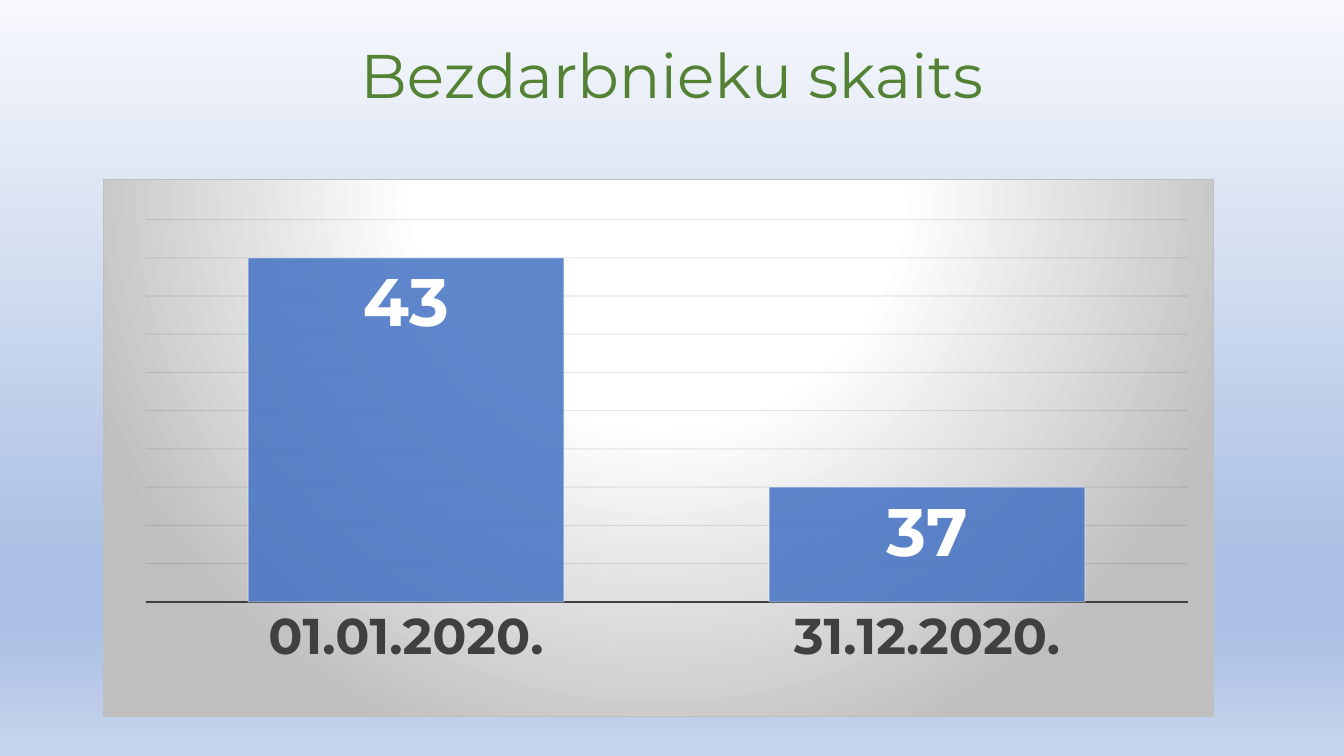
"""Build a slide with a column chart of the number of unemployed people."""
from dataclasses import dataclass

import lxml.etree
import pptx
import pptx.chart.data
import pptx.dml.color
import pptx.enum.chart
import pptx.enum.text
import pptx.oxml
import pptx.oxml.ns
import pptx.util

Pt = pptx.util.Pt
qn = pptx.oxml.ns.qn


@dataclass(frozen=True)
class Theme:
    font: str = "Montserrat"
    base_font: str = "Calibri"
    title: str = "548235"
    bar: str = "4472C4"
    white: str = "FFFFFF"
    black: str = "000000"
    axis: str = "404040"
    grid: str = "0D0D0D"
    border: str = "BFBFBF"
    page_stops: tuple = ((0, "F6F8FC"), (74, "ABC0E4"), (83, "ABC0E4"), (100, "C7D5ED"))
    panel_stops: tuple = ((0, "FFFFFF"), (39, "FFFFFF"), (100, "BFBFBF"))
    title_size: int = 44
    label_size: int = 48
    category_size: int = 36
    base_size: int = 10
    hairline: float = 0.75
    axis_line: float = 1.5


THEME = Theme()
LINEAR = '<a:lin ang="5400000" scaled="0"/>'
RADIAL = ('<a:path path="circle"><a:fillToRect l="50000" t="-80000" '
          'r="50000" b="180000"/></a:path>')


def rgb(color):
    return pptx.dml.color.RGBColor.from_string(color)


def style_font(font, size, color, name=THEME.font, bold=False):
    font.name, font.size, font.bold = name, Pt(size), bold
    font.color.rgb = rgb(color)


def style_line(line, color, width):
    line.color.rgb = rgb(color)
    line.width = Pt(width)


def set_alpha(parent, *percents):
    for clr, percent in zip(parent.iter(qn("a:srgbClr")), percents):
        lxml.etree.SubElement(clr, qn("a:alpha")).set("val", str(percent * 1000))


def gradient_xml(stops, direction):
    gs = "".join(f'<a:gs pos="{pos * 1000}"><a:srgbClr val="{color}"/></a:gs>'
                 for pos, color in stops)
    return f'<a:gradFill rotWithShape="1"><a:gsLst>{gs}</a:gsLst>{direction}</a:gradFill>'


def set_background(s):
    s.background.fill.gradient()
    old = next(s._element.iter(qn("a:gradFill")))
    xml = gradient_xml(THEME.page_stops, LINEAR).replace(
        "<a:gradFill", f'<a:gradFill {pptx.oxml.ns.nsdecls("a")}', 1)
    old.getparent().replace(old, pptx.oxml.parse_xml(xml))


def write_text(tf, text, align=pptx.enum.text.PP_ALIGN.CENTER, spacing=0.9, **font):
    p = tf.paragraphs[0]
    p.alignment, p.line_spacing = align, spacing
    r = p.add_run()
    r.text = text
    style_font(r.font, **font)


def add_title(s, text):
    sp = s.shapes.title
    sp.left, sp.top, sp.width, sp.height = Pt(66), Pt(28.8), Pt(828), Pt(104.4)
    tf = sp.text_frame
    tf.word_wrap = True
    tf.auto_size = pptx.enum.text.MSO_AUTO_SIZE.NONE
    tf.vertical_anchor = pptx.enum.text.MSO_ANCHOR.TOP
    write_text(tf, text, size=THEME.title_size, color=THEME.title)


def style_panel(chart):
    xml = (f'<c:spPr {pptx.oxml.ns.nsdecls("c", "a")}>'
           f'{gradient_xml(THEME.panel_stops, RADIAL)}'
           f'<a:ln w="{Pt(THEME.hairline)}"><a:solidFill>'
           f'<a:srgbClr val="{THEME.border}"/></a:solidFill></a:ln></c:spPr>')
    chart._chartSpace.find(qn("c:chart")).addnext(pptx.oxml.parse_xml(xml))


def place_plot(chart, x, y, w, h):
    area = chart._chartSpace.find(qn("c:chart")).find(qn("c:plotArea"))
    for old in area.findall(qn("c:layout")):
        area.remove(old)
    xml = (f'<c:layout {pptx.oxml.ns.nsdecls("c")}><c:manualLayout>'
           '<c:layoutTarget val="inner"/><c:xMode val="edge"/><c:yMode val="edge"/>'
           f'<c:x val="{x}"/><c:y val="{y}"/><c:w val="{w}"/><c:h val="{h}"/>'
           '</c:manualLayout></c:layout>')
    area.insert(0, pptx.oxml.parse_xml(xml))


def style_axes(chart, low, high):
    cat, val = chart.category_axis, chart.value_axis
    cat.major_tick_mark = pptx.enum.chart.XL_TICK_MARK.NONE
    style_font(cat.tick_labels.font, THEME.category_size, THEME.axis, bold=True)
    style_line(cat.format.line, THEME.axis, THEME.axis_line)
    val.visible = False
    val.minimum_scale, val.maximum_scale, val.major_unit = low, high, 1
    val.has_major_gridlines = True
    style_line(val.major_gridlines.format.line, THEME.grid, THEME.hairline)
    set_alpha(val._element.find(qn("c:majorGridlines")), 10)


def style_columns(plot):
    plot.gap_width, plot.vary_by_categories = 65, False
    ser = plot.series[0]
    ser.format.fill.solid()
    ser.format.fill.fore_color.rgb = rgb(THEME.bar)
    style_line(ser.format.line, THEME.white, THEME.hairline)
    set_alpha(ser._element.find(qn("c:spPr")), 85, 50)
    labels = ser.data_labels
    labels.show_value = True
    labels.position = pptx.enum.chart.XL_LABEL_POSITION.INSIDE_END
    style_font(labels.font, THEME.label_size, THEME.white, bold=True)


def add_column_chart(s, categories, values, low, high):
    data = pptx.chart.data.CategoryChartData()
    data.categories = categories
    data.add_series("Series 1", values)
    chart = s.shapes.add_chart(pptx.enum.chart.XL_CHART_TYPE.COLUMN_CLUSTERED,
                               Pt(73.44), Pt(128.16), Pt(793.44), Pt(383.76), data).chart
    chart.has_legend = chart.has_title = False
    style_font(chart.font, THEME.base_size, THEME.black, name=THEME.base_font)
    style_panel(chart)
    place_plot(chart, 0.038, 0.074, 0.939, 0.713)
    style_axes(chart, low, high)
    style_columns(chart.plots[0])


def main():
    prs = pptx.Presentation()
    prs.slide_width, prs.slide_height = Pt(960), Pt(540)
    s = prs.slides.add_slide(prs.slide_layouts[5])
    set_background(s)
    add_title(s, "Bezdarbnieku skaits")
    add_column_chart(s, ["01.01.2020.", "31.12.2020."], [43, 37], low=34, high=44)
    prs.save("out.pptx")


if __name__ == "__main__":
    main()
